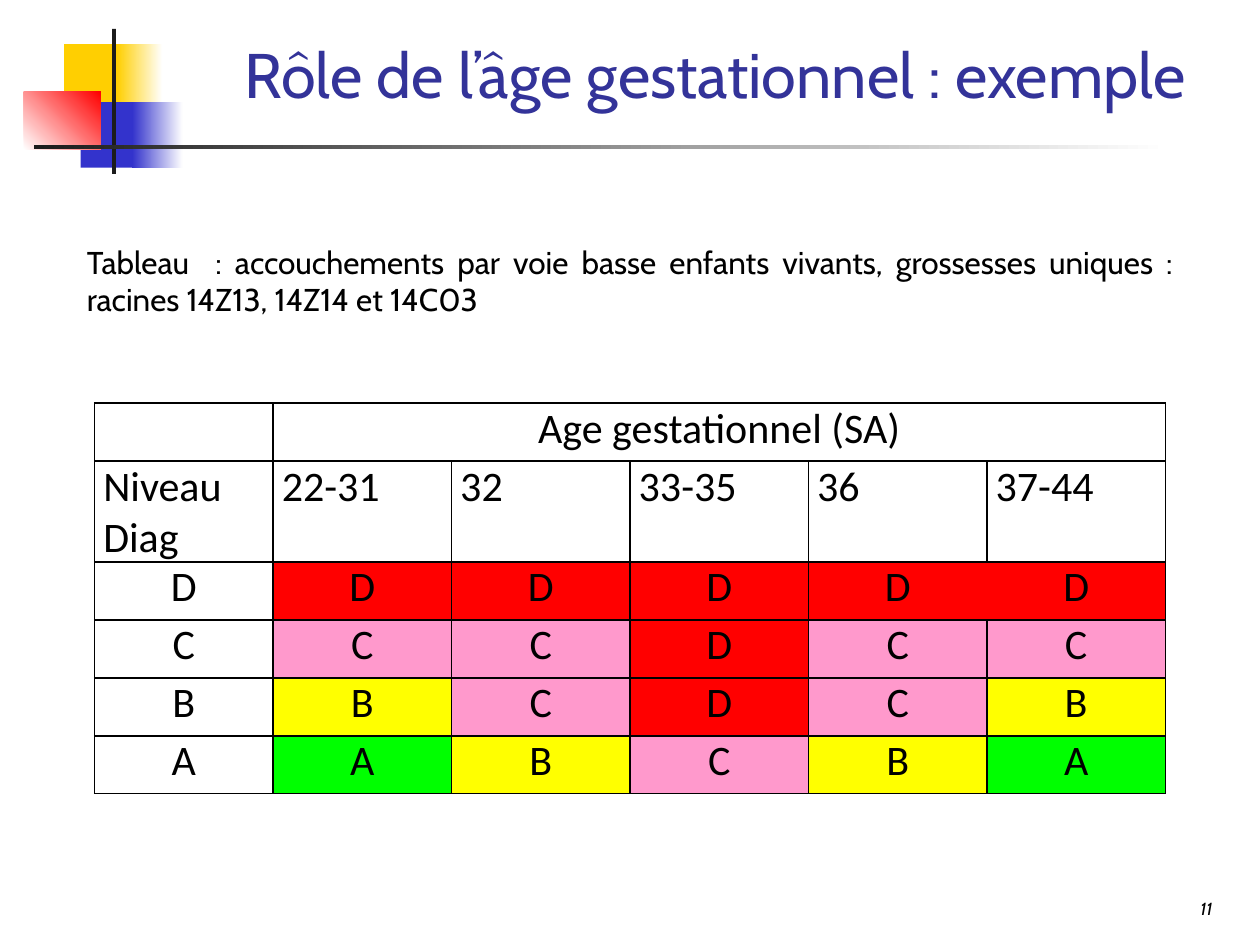
from typing import NamedTuple, Optional

from lxml import etree
from pptx import Presentation
from pptx.dml.color import RGBColor
from pptx.enum.shapes import MSO_SHAPE
from pptx.enum.text import MSO_ANCHOR, PP_ALIGN
from pptx.oxml.ns import qn
from pptx.util import Inches, Pt

RECT = MSO_SHAPE.RECTANGLE
CENTER, RIGHT, JUSTIFY = PP_ALIGN.CENTER, PP_ALIGN.RIGHT, PP_ALIGN.JUSTIFY
MIDDLE, BOTTOM = MSO_ANCHOR.MIDDLE, MSO_ANCHOR.BOTTOM
BLACK, DARK, WHITE = "000000", "1C1C1C", "FFFFFF"
GOLD, BLUE, RED = "FFCF01", "3333CC", "FF0000"
LEVEL_FILLS = {"A": "00FF00", "B": "FFFF00", "C": "FF99CC", "D": RED}


class Bar(NamedTuple):
    """A rectangle; with an end colour it fades along the angle."""
    left: float
    top: float
    width: float
    height: float
    color: str
    end: Optional[str] = None
    angle: int = 0


BARS = [
    Bar(0.51, 0.35, 0.48, 0.52, GOLD),
    Bar(0.93, 0.35, 0.36, 0.52, GOLD, WHITE),
    Bar(0.64, 0.81, 0.46, 0.52, BLUE),
    Bar(1.05, 0.81, 0.4, 0.52, BLUE, WHITE),
    Bar(0.19, 0.73, 0.61, 0.46, WHITE, RED, 45),
    Bar(0.89, 0.23, 0.03, 1.15, DARK),
    Bar(0.27, 1.15, 9, 0.03, DARK, WHITE),
]

AGES = ["22-31", "32", "33-35", "36", "37-44"]
LEVELS = {"D": "DDDDD", "C": "CCDCC", "B": "BCDCB", "A": "ABCBA"}
ROWS = [
    ["", "Age gestationnel (SA)", "", "", "", ""],
    ["Niveau Diag", *AGES],
    *([level, *results] for level, results in LEVELS.items()),
]
# The last two cells of level D have no line between them
OPEN_SIDES = {(2, 4): "R", (2, 5): "L"}


def rgb(color: str) -> RGBColor:
    return RGBColor.from_string(color)


def add_bar(shapes, bar: Bar) -> None:
    sp = shapes.add_shape(RECT, *map(Inches, bar[:4]))
    sp.shadow.inherit = False
    sp.line.fill.background()
    if bar.end is None:
        sp.fill.solid()
        sp.fill.fore_color.rgb = rgb(bar.color)
        return
    sp.fill.gradient()
    sp.fill.gradient_angle = bar.angle
    for stop, color in zip(sp.fill.gradient_stops, (bar.color, bar.end)):
        stop.color.rgb = rgb(color)


def write(tf, text: str, align, color: str = BLACK, **font) -> None:
    p = tf.paragraphs[0]
    p.alignment = align
    r = p.add_run()
    r.text = text
    r.font.color.rgb = rgb(color)
    for name, value in font.items():
        setattr(r.font, name, value)


def add_text(shapes, box, text: str, align, anchor, **font) -> None:
    tf = shapes.add_textbox(*map(Inches, box)).text_frame
    tf.word_wrap = True
    tf.vertical_anchor = anchor
    write(tf, text, align, name="Cabin", **font)


def set_borders(cell, open_side: str) -> None:
    """Draw 1 pt black lines on all sides but the open one."""
    tcPr = cell._tc.get_or_add_tcPr()
    for side in "LRTB":
        ln = etree.SubElement(tcPr, qn(f"a:ln{side}"), w=str(Pt(1)))
        if side == open_side:
            etree.SubElement(ln, qn("a:noFill"))
        else:
            fill = etree.SubElement(ln, qn("a:solidFill"))
            etree.SubElement(fill, qn("a:srgbClr"), val=BLACK)


def add_level_table(shapes) -> None:
    n_rows, n_cols = len(ROWS), len(ROWS[0])
    frame = shapes.add_table(n_rows, n_cols, Inches(0.75), Inches(3.2),
                             Inches(8.5), Inches(0.46 * n_rows))
    table = frame.table
    table.first_row = table.horz_banding = False
    table.cell(0, 1).merge(table.cell(0, n_cols - 1))
    margins = {"margin_left": 0.07, "margin_right": 0.07,
               "margin_top": 0, "margin_bottom": 0}
    for i, row in enumerate(ROWS):
        for j, text in enumerate(row):
            cell = table.cell(i, j)
            for name, value in margins.items():
                setattr(cell, name, Inches(value))
            set_borders(cell, OPEN_SIDES.get((i, j), ""))
            if i > 1 and j > 0:
                cell.fill.solid()
                cell.fill.fore_color.rgb = rgb(LEVEL_FILLS[text])
            else:
                cell.fill.background()
            if text:
                write(cell.text_frame, text, JUSTIFY if i == 1 else CENTER,
                      name="Calibri", size=Pt(24))


def main() -> None:
    prs = Presentation()
    prs.slide_width, prs.slide_height = Inches(10), Inches(7.5)
    s = prs.slides.add_slide(prs.slide_layouts[5])
    for bar in BARS:
        add_bar(s.shapes, bar)

    title = s.shapes.title
    box = {"left": 1.58, "top": 0.17, "width": 8.19, "height": 0.83}
    for name, value in box.items():
        setattr(title, name, Inches(value))
    title.text_frame.vertical_anchor = MIDDLE
    write(title.text_frame, "Rôle de l’âge gestationnel : exemple", CENTER,
          "333399", name="Cabin", size=Pt(36))

    add_text(s.shapes, (7.99, 6.98, 1.73, 0.36), "11", RIGHT, BOTTOM,
             size=Pt(10), italic=True)
    add_text(s.shapes, (0.59, 1.87, 8.82, 0.71),
             "Tableau  : accouchements par voie basse enfants vivants, "
             "grossesses uniques : racines 14Z13, 14Z14 et 14C03",
             JUSTIFY, MIDDLE, size=Pt(18))
    add_level_table(s.shapes)
    prs.save("out.pptx")


if __name__ == "__main__":
    main()
